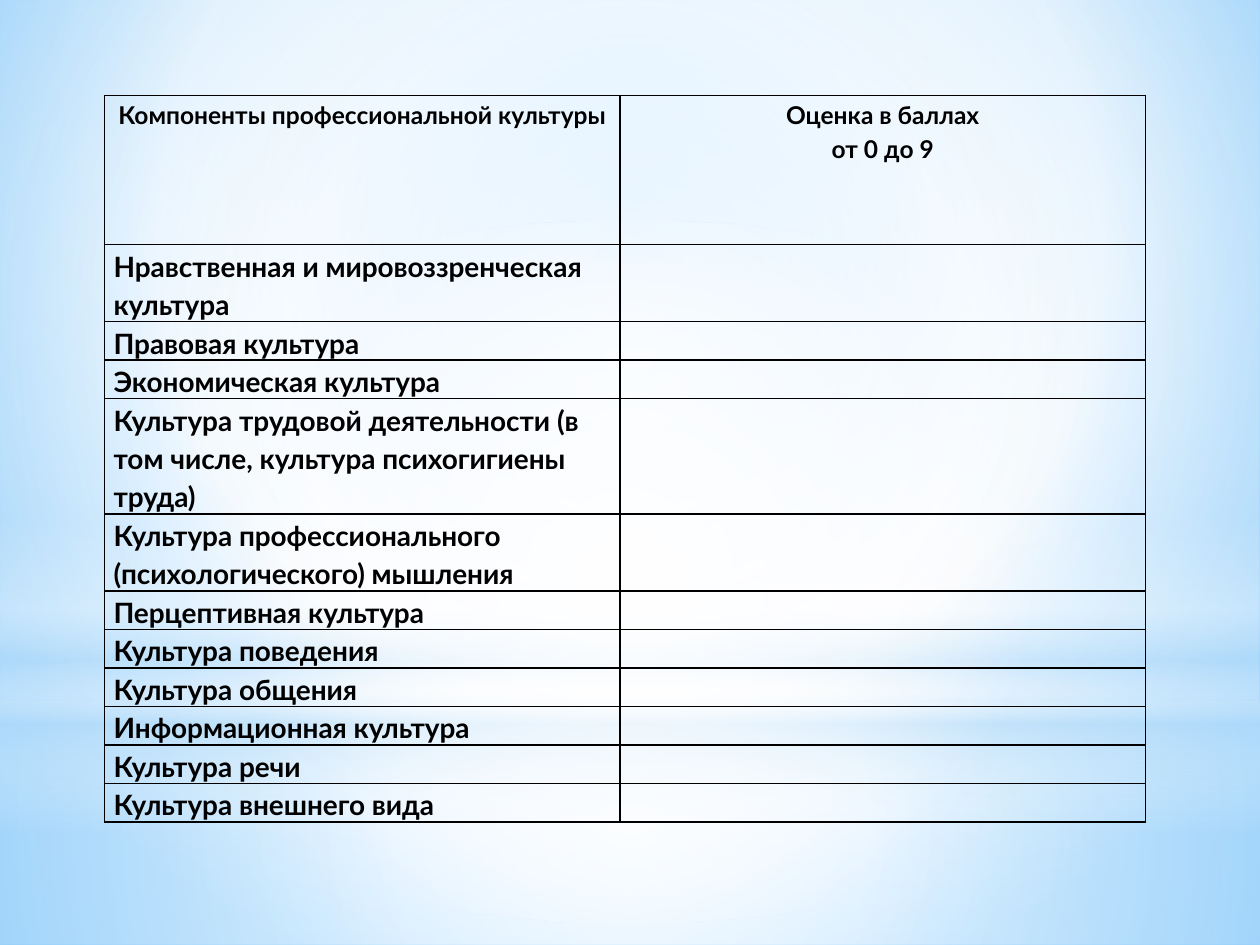
from lxml import etree
from pptx import Presentation
from pptx.dml.color import RGBColor
from pptx.enum.shapes import MSO_SHAPE as SHAPE
from pptx.enum.text import PP_ALIGN as ALIGN
from pptx.oxml import parse_xml
from pptx.oxml.ns import nsdecls, qn
from pptx.util import Cm, Pt

# Content
HEADER = ["Компоненты профессиональной культуры", "Оценка в баллах\nот 0 до 9"]
COMPONENTS = [  # text, number of lines it takes
    ("Нравственная и мировоззренческая культура", 2),
    ("Правовая культура", 1),
    ("Экономическая культура", 1),
    ("Культура трудовой деятельности (в том числе, культура психогигиены труда)", 3),
    ("Культура профессионального (психологического) мышления", 2),
    ("Перцептивная культура", 1),
    ("Культура поведения", 1),
    ("Культура общения", 1),
    ("Информационная культура", 1),
    ("Культура речи", 1),
    ("Культура внешнего вида", 1),
]

# Format
FONT = "Lato"
BLACK = RGBColor(0x00, 0x00, 0x00)
WHITE = RGBColor(0xFF, 0xFF, 0xFF)
PALE = RGBColor(0xB4, 0xDC, 0xFA)
SKY = RGBColor(0x9E, 0xD5, 0xFF)
BLUE = RGBColor(0x5B, 0xB9, 0xFF)
WIDTH, HEIGHT = 25.4, 19.05
LEFT, TOP = 2.11, 1.93
COL_WIDTHS = [10.39, 10.59]
HEADER_HEIGHT, LINE_HEIGHT = 3, 0.75
CENTRE = (50, 50, 50, 50)

# Background: gradient stops are (position %, colour, opacity %)
BACKDROP = [(0, SKY, 100), (60, WHITE, 100), (100, BLUE, 100)]
GLOWS = [  # shape, top, height, stops, focus (None for a vertical gradient)
    (SHAPE.RECTANGLE, 14.17, 4.88,
     [(0, WHITE, 91), (37, WHITE, 76), (100, PALE, 79)], CENTRE),
    (SHAPE.RECTANGLE, 0, 14.17,
     [(0, WHITE, 89), (48, WHITE, 62), (100, PALE, 79)], CENTRE),
    (SHAPE.RECTANGLE, 10.46, 6.35,
     [(0, WHITE, 0), (29, WHITE, 30), (45, PALE, 40), (55, WHITE, 26),
      (65, PALE, 60), (100, WHITE, 0)], None),
    (SHAPE.OVAL, 4.45, 14.17, [(0, WHITE, 100), (56, WHITE, 0)], CENTRE),
]


def set_gradient(parent, stops, focus):
    """Swap the solid fill inside parent for a gradient."""
    gs = "".join(
        f'<a:gs pos="{pos * 1000}"><a:srgbClr val="{color}">'
        f'<a:alpha val="{alpha * 1000}"/></a:srgbClr></a:gs>'
        for pos, color, alpha in stops)
    if focus:
        sides = " ".join(f'{k}="{v * 1000}"' for k, v in zip("ltrb", focus))
        way = f'<a:path path="circle"><a:fillToRect {sides}/></a:path>'
    else:
        way = '<a:lin ang="5400000" scaled="0"/>'
    grad = parse_xml(f'<a:gradFill {nsdecls("a")} rotWithShape="1">'
                     f'<a:gsLst>{gs}</a:gsLst>{way}</a:gradFill>')
    parent.replace(parent.find(qn("a:solidFill")), grad)


def write(tf, text, size=16, align=ALIGN.LEFT):
    for i, line in enumerate(text.split("\n")):
        p = tf.paragraphs[0] if i == 0 else tf.add_paragraph()
        p.alignment, p.line_spacing = align, 1.15
        r = p.add_run()
        r.text = line
        r.font.name, r.font.size, r.font.bold = FONT, Pt(size), True
        r.font.color.rgb = BLACK


def format_cell(cell):
    cell.margin_left = cell.margin_right = Cm(0.18)
    cell.margin_top = cell.margin_bottom = 0
    cell.fill.background()
    tcPr = cell._tc.get_or_add_tcPr()
    for i, side in enumerate("LRTB"):
        ln = etree.Element(qn(f"a:ln{side}"), w=str(Pt(1)))
        fill = etree.SubElement(ln, qn("a:solidFill"))
        etree.SubElement(fill, qn("a:srgbClr"), val=str(BLACK))
        tcPr.insert(i, ln)


def main():
    prs = Presentation()
    prs.slide_width, prs.slide_height = Cm(WIDTH), Cm(HEIGHT)
    s = prs.slides.add_slide(prs.slide_layouts[6])

    # Background and glows
    s.background.fill.solid()
    bgPr = s._element.cSld.find(qn("p:bg")).find(qn("p:bgPr"))
    set_gradient(bgPr, BACKDROP, (20, 10, 20, 60))
    for kind, top, height, stops, focus in GLOWS:
        sp = s.shapes.add_shape(kind, 0, Cm(top), Cm(WIDTH), Cm(height))
        sp.shadow.inherit = False
        sp.line.fill.background()
        sp.fill.solid()
        set_gradient(sp._element.spPr, stops, focus)

    # Score table
    heights = [HEADER_HEIGHT] + [n * LINE_HEIGHT for _, n in COMPONENTS]
    table = s.shapes.add_table(len(heights), len(COL_WIDTHS), Cm(LEFT), Cm(TOP),
                               Cm(sum(COL_WIDTHS)), Cm(sum(heights))).table
    table.first_row = table.horz_banding = False
    for col, width in zip(table.columns, COL_WIDTHS):
        col.width = Cm(width)
    for row, height in zip(table.rows, heights):
        row.height = Cm(height)
    for cell in table.iter_cells():
        format_cell(cell)
    for c, text in enumerate(HEADER):
        write(table.cell(0, c).text_frame, text, size=14, align=ALIGN.CENTER)
    for r, (text, _) in enumerate(COMPONENTS, start=1):
        write(table.cell(r, 0).text_frame, text)

    prs.save("out.pptx")


if __name__ == "__main__":
    main()
